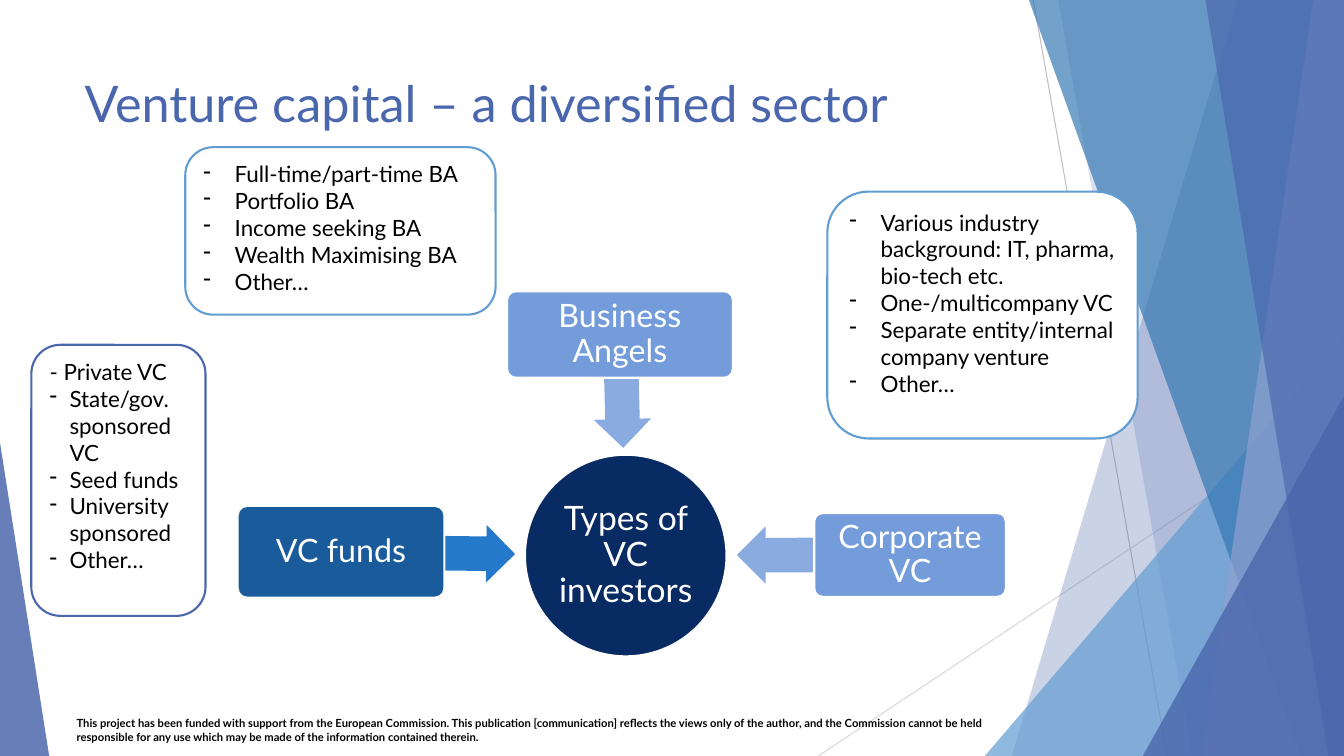
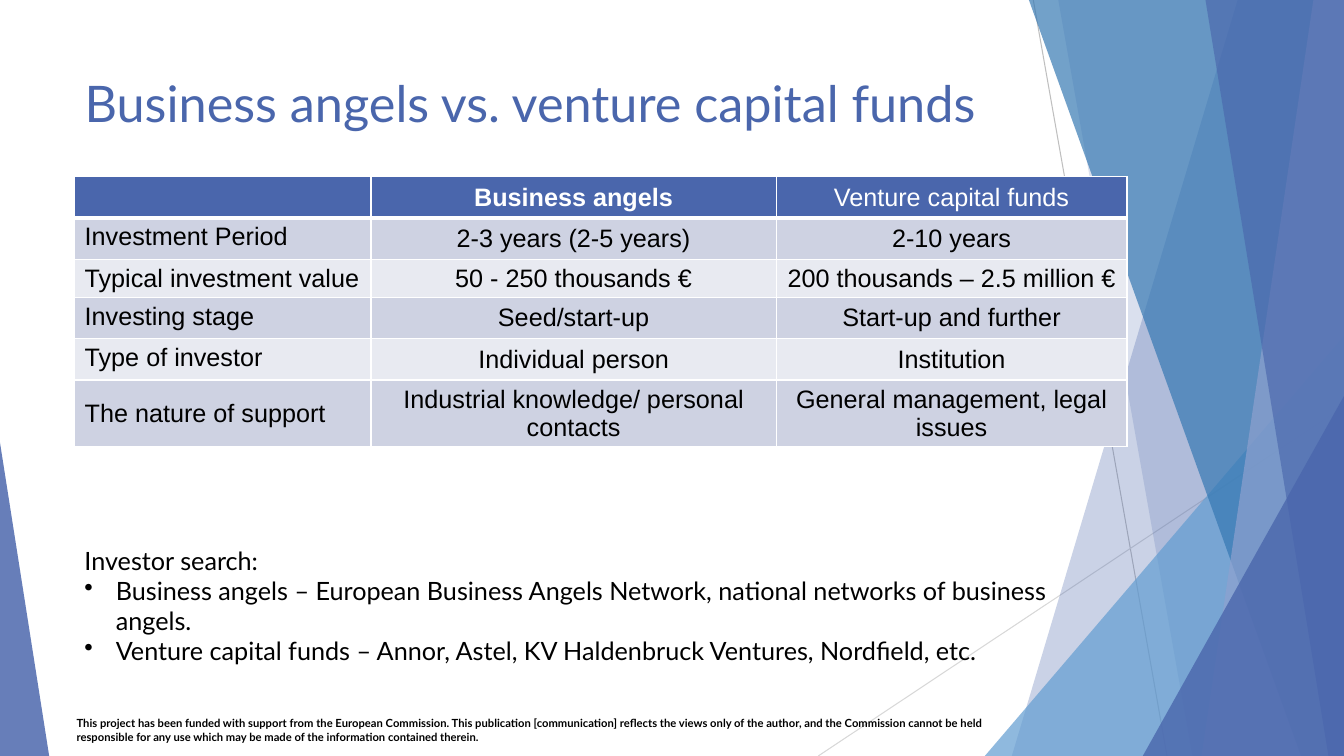
from lxml import etree
from pptx import Presentation
from pptx.dml.color import RGBColor
from pptx.enum.shapes import MSO_CONNECTOR, MSO_SHAPE
from pptx.enum.text import MSO_ANCHOR, MSO_AUTO_SIZE, PP_ALIGN
from pptx.oxml.ns import qn
from pptx.util import Cm, Pt

STRAIGHT = MSO_CONNECTOR.STRAIGHT
TRIANGLE = MSO_SHAPE.ISOSCELES_TRIANGLE
ROUNDED = MSO_SHAPE.ROUNDED_RECTANGLE
OVAL = MSO_SHAPE.OVAL
LEFT_ARROW = MSO_SHAPE.LEFT_ARROW
TOP, MIDDLE = MSO_ANCHOR.TOP, MSO_ANCHOR.MIDDLE
LEFT, CENTER = PP_ALIGN.LEFT, PP_ALIGN.CENTER

WHITE = RGBColor(0xFF, 0xFF, 0xFF)
BLACK = RGBColor(0x00, 0x00, 0x00)
INDIGO = RGBColor(0x4A, 0x66, 0xAC)
SKY = RGBColor(0x62, 0x9D, 0xD1)
STEEL = RGBColor(0x34, 0x77, 0xB2)
LAVENDER = RGBColor(0x8F, 0xA1, 0xCF)
GREY = RGBColor(0xBF, 0xBF, 0xBF)
LIGHT_GREY = RGBColor(0xD8, 0xD8, 0xD8)
NAVY = RGBColor(0x07, 0x2B, 0x62)
OCEAN = RGBColor(0x1A, 0x5C, 0x9B)
BRIGHT = RGBColor(0x25, 0x79, 0xCA)
PERIWINKLE = RGBColor(0x74, 0x9C, 0xDB)
PALE_ARROW = RGBColor(0x89, 0xAB, 0xE0)
ROW_DARK = RGBColor(0xCE, 0xD2, 0xE2)
ROW_LIGHT = RGBColor(0xE8, 0xEA, 0xF1)

WIDTH, HEIGHT = 33.87, 19.05
FONT, TABLE_FONT = "Lato", "Arial"


def add_run(paragraph, text, size, colour=BLACK, bold=False, font=FONT):
    run = paragraph.add_run()
    run.text = text
    run.font.name = font
    run.font.size = Pt(size)
    run.font.bold = bold
    run.font.color.rgb = colour


def write_list(text_frame, lines, size, bullet, indent, plain_lines=0):
    text_frame.word_wrap = True
    for index, line in enumerate(lines):
        paragraph = text_frame.add_paragraph() if index else text_frame.paragraphs[0]
        paragraph.alignment = LEFT
        if index >= plain_lines:
            properties = paragraph._p.get_or_add_pPr()
            properties.set("marL", str(Cm(indent)))
            properties.set("indent", str(-Cm(indent)))
            bullet_colour = etree.SubElement(properties, qn("a:buClr"))
            etree.SubElement(bullet_colour, qn("a:srgbClr"), val=str(BLACK))
            etree.SubElement(properties, qn("a:buChar"), char=bullet)
        add_run(paragraph, line, size)


presentation = Presentation()
presentation.slide_width = Cm(WIDTH)
presentation.slide_height = Cm(HEIGHT)

layout = presentation.slide_layouts[5]
for placeholder in list(layout.placeholders):
    if placeholder.placeholder_format.idx:
        layout.shapes.element.remove(placeholder.element)
layout_title = layout.placeholders[0]
layout_title.left, layout_title.top = Cm(1.88), Cm(1.7)
layout_title.width, layout_title.height = Cm(23.88), Cm(3.66)
layout_title.text_frame.vertical_anchor = TOP
layout_title.text_frame.auto_size = MSO_AUTO_SIZE.NONE

slides = []
for title in (
    "Venture capital – a diversified sector",
    "Business angels vs. venture capital funds",
):
    slide = presentation.slides.add_slide(layout)
    paragraph = slide.shapes.title.text_frame.paragraphs[0]
    paragraph.alignment = LEFT
    add_run(paragraph, title, 36, INDIGO)
    slides.append(slide)
investor_slide, comparison_slide = slides

shapes = investor_slide.shapes
decorations = []
for start_x, start_y, end_x, colour in (
    (26.04, 0, 29.41, GREY),
    (WIDTH, 10.24, 20.62, LIGHT_GREY),
):
    line = shapes.add_connector(STRAIGHT, Cm(start_x), Cm(start_y), Cm(end_x), Cm(HEIGHT))
    line.line.color.rgb = colour
    line.line.width = Pt(0.75)
    etree.SubElement(line.element.spPr, qn("a:effectLst"))
    decorations.append(line)

for kind, geometry, colour, opacity in (
    ("band", (31.19, 25.5), INDIGO, 29),
    ("band", (26.67, 30.05), INDIGO, 20),
    ("triangle", (24.82, 8.46, 9.05, 1), SKY, 71),
    ("band", (25.93, 32.79), STEEL, 69),
    ("band", (33.1, 30.28), LAVENDER, 69),
    ("band", (30.38, 33.48), INDIGO, 64),
    ("triangle", (28.8, 9.98, 5.07, 1), INDIGO, 80),
    ("triangle", (0, 11.15, 1.24, 0), INDIGO, 84),
):
    if kind == "band":
        top_x, bottom_x = geometry
        builder = shapes.build_freeform(Cm(top_x), 0)
        builder.add_line_segments(
            [(Cm(WIDTH), 0), (Cm(WIDTH), Cm(HEIGHT)), (Cm(bottom_x), Cm(HEIGHT))]
        )
        facet = builder.convert_to_shape()
    else:
        left, top, width, apex = geometry
        facet = shapes.add_shape(TRIANGLE, Cm(left), Cm(top), Cm(width), Cm(HEIGHT - top))
        facet.adjustments[0] = apex
    facet.shadow.inherit = False
    facet.line.fill.background()
    facet.fill.solid()
    facet.fill.fore_color.rgb = colour
    fill_colour = facet.element.spPr.find(f"{qn('a:solidFill')}/{qn('a:srgbClr')}")
    etree.SubElement(fill_colour, qn("a:alpha"), val=str(opacity * 1000))
    decorations.append(facet)

footer = shapes.add_textbox(Cm(1.68), Cm(17.93), Cm(24.03), Cm(0.94))
footer.text_frame.word_wrap = True
add_run(
    footer.text_frame.paragraphs[0],
    "This project has been funded with support from the European Commission. "
    "This publication [communication] reflects the views only of the author, "
    "and the Commission cannot be held responsible for any use which may be made "
    "of the information contained therein.",
    8,
    bold=True,
)
decorations.append(footer)
for decoration in decorations:
    layout.shapes.element.append(decoration.element)

for left, top, width, rotation, colour in (
    (8.59, 13.21, 4.39, 180.7, BRIGHT),
    (14.25, 9.14, 2.84, 268.5, PALE_ARROW),
    (18.57, 13.26, 4.37, 359.9, PALE_ARROW),
):
    arrow = shapes.add_shape(LEFT_ARROW, Cm(left), Cm(top), Cm(width), Cm(1.45))
    arrow.adjustments[0] = 0.6
    arrow.adjustments[1] = 0.5
    arrow.rotation = rotation
    arrow.shadow.inherit = False
    arrow.fill.solid()
    arrow.fill.fore_color.rgb = colour
    arrow.line.fill.background()

for kind, left, top, width, height, colour, text, size, inset in (
    (OVAL, 13.23, 11.46, 5.08, 5.08, NAVY, "Types of VC investors", 24, 0.05),
    (ROUNDED, 5.99, 12.75, 5.21, 2.31, OCEAN, "VC funds", 23, 0.13),
    (ROUNDED, 12.78, 7.34, 5.69, 2.18, PERIWINKLE, "Business Angels", 23, 0.13),
    (ROUNDED, 20.52, 12.93, 4.83, 2.11, PERIWINKLE, "Corporate VC", 23, 0.13),
):
    node = shapes.add_shape(kind, Cm(left), Cm(top), Cm(width), Cm(height))
    if kind == ROUNDED:
        node.adjustments[0] = 0.1
    node.shadow.inherit = False
    node.fill.solid()
    node.fill.fore_color.rgb = colour
    node.line.color.rgb = WHITE
    node.line.width = Pt(1.5)
    frame = node.text_frame
    frame.word_wrap = True
    frame.vertical_anchor = MIDDLE
    frame.margin_left = frame.margin_right = Cm(inset)
    frame.margin_top = frame.margin_bottom = Cm(inset)
    paragraph = frame.paragraphs[0]
    paragraph.alignment = CENTER
    paragraph.line_spacing = 0.9
    add_run(paragraph, text, size, WHITE)

for left, top, width, height, outline, indent, plain_lines, lines in (
    (0.79, 8.69, 4.39, 6.83, INDIGO, 0.5, 1, (
        "- Private VC",
        "State/gov. sponsored VC",
        "Seed funds",
        "University sponsored",
        "Other…",
    )),
    (4.67, 3.71, 7.82, 4.22, SKY, 0.79, 0, (
        "Full-time/part-time BA",
        "Portfolio BA",
        "Income seeking BA",
        "Wealth Maximising BA",
        "Other…",
    )),
    (20.85, 4.83, 7.82, 6.22, SKY, 0.79, 0, (
        "Various industry background: IT, pharma, bio-tech etc.",
        "One-/multicompany VC",
        "Separate entity/internal company venture",
        "Other…",
    )),
):
    callout = shapes.add_shape(ROUNDED, Cm(left), Cm(top), Cm(width), Cm(height))
    callout.shadow.inherit = False
    callout.fill.solid()
    callout.fill.fore_color.rgb = WHITE
    callout.line.color.rgb = outline
    callout.line.width = Pt(1.5)
    callout.text_frame.vertical_anchor = TOP
    write_list(callout.text_frame, lines, 16, "-", indent, plain_lines)

COMPARISON = (
    ("", "Business angels", "Venture capital funds"),
    ("Investment Period", "2-3 years (2-5 years)", "2-10 years"),
    ("Typical investment value", "50 - 250 thousands €", "200 thousands – 2.5 million €"),
    ("Investing stage", "Seed/start-up", "Start-up and further"),
    ("Type of investor", "Individual person", "Institution"),
    ("The nature of support", "Industrial knowledge/ personal contacts",
     "General management, legal issues"),
)
COLUMN_WIDTHS = (7.47, 10.21, 8.84)
ROW_HEIGHTS = (1.04, 1.04, 0.96, 1.04, 1.04, 1.68)
LAST_ROW = len(COMPARISON) - 1

table = comparison_slide.shapes.add_table(
    len(ROW_HEIGHTS), len(COLUMN_WIDTHS), Cm(1.88), Cm(4.45),
    Cm(sum(COLUMN_WIDTHS)), Cm(sum(ROW_HEIGHTS)),
).table
table.horz_banding = False
for column, width in zip(table.columns, COLUMN_WIDTHS):
    column.width = Cm(width)
for row_index, (height, texts) in enumerate(zip(ROW_HEIGHTS, COMPARISON)):
    table.rows[row_index].height = Cm(height)
    is_header = row_index == 0
    row_fill = INDIGO if is_header else ROW_DARK if row_index % 2 else ROW_LIGHT
    for column_index, text in enumerate(texts):
        cell = table.cell(row_index, column_index)
        is_label = column_index == 0
        cell.vertical_anchor = TOP if is_label and row_index < LAST_ROW else MIDDLE
        properties = cell._tc.get_or_add_tcPr()
        for side in ("lnL", "lnR", "lnT", "lnB"):
            thick = (is_header and side == "lnB") or (row_index == 1 and side == "lnT")
            border = etree.SubElement(properties, qn(f"a:{side}"), w=str(Pt(3 if thick else 1)))
            border_fill = etree.SubElement(border, qn("a:solidFill"))
            etree.SubElement(border_fill, qn("a:srgbClr"), val=str(WHITE))
        cell.fill.solid()
        cell.fill.fore_color.rgb = row_fill
        if text:
            paragraph = cell.text_frame.paragraphs[0]
            paragraph.alignment = LEFT if is_label else CENTER
            add_run(paragraph, text, 18, WHITE if is_header else BLACK,
                    is_header and column_index == 1, TABLE_FONT)

search = comparison_slide.shapes.add_textbox(Cm(1.88), Cm(13.61), Cm(26.52), Cm(3.33))
write_list(search.text_frame, (
    "Investor search:",
    "Business angels – European Business Angels Network, national networks of business angels.",
    "Venture capital funds – Annor, Astel, KV Haldenbruck Ventures, Nordfield, etc.",
), 18, "•", 0.79, 1)

presentation.save("out.pptx")
